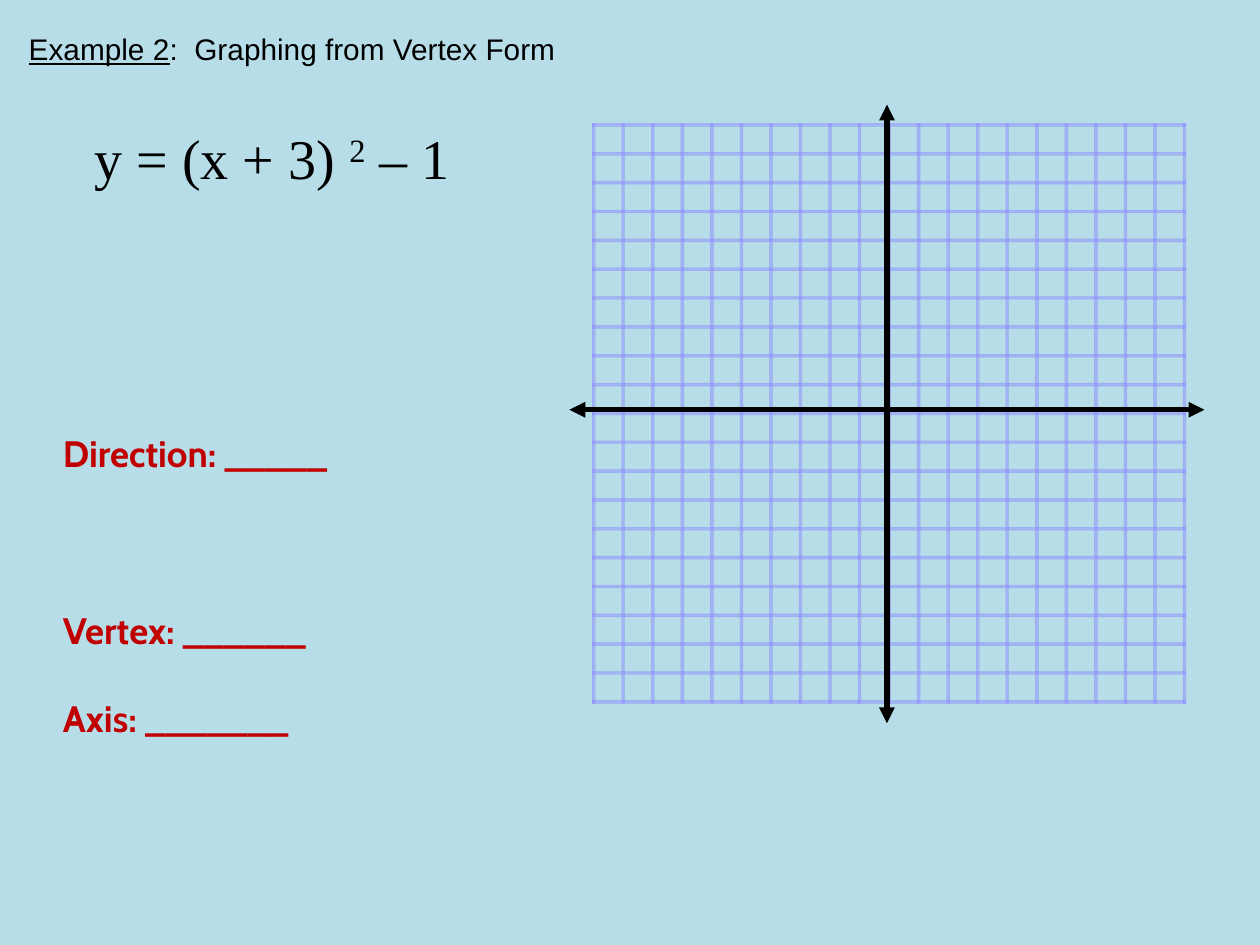
import pptx
import pptx.util
import pptx.dml.color
import pptx.enum.shapes
import pptx.enum.text
import pptx.oxml.ns
import lxml.etree

Cm = pptx.util.Cm
Pt = pptx.util.Pt
qn = pptx.oxml.ns.qn
COLORS = {
    "background": "B7DEE8",
    "grid": "8C8CFF",
    "ink": "000000",
    "prompt": "C00000",
}


def rgb(name):
    return pptx.dml.color.RGBColor.from_string(COLORS[name])


def add_text(slide, paragraphs, left, top, width, height, font, size,
             color="ink", bold=False, inset=0.1, wrap=True):
    shape = slide.shapes.add_textbox(Cm(left), Cm(top), Cm(width), Cm(height))
    frame = shape.text_frame
    frame.word_wrap = wrap
    frame.auto_size = pptx.enum.text.MSO_AUTO_SIZE.SHAPE_TO_FIT_TEXT
    frame.margin_left = frame.margin_right = Cm(inset)
    frame.margin_top = frame.margin_bottom = Cm(inset)
    for index, (space_before, runs) in enumerate(paragraphs):
        paragraph = frame.add_paragraph() if index else frame.paragraphs[0]
        paragraph.space_before = Pt(space_before)
        for text, style in runs:
            run = paragraph.add_run()
            run.text = text
            run.font.name = font
            run.font.size = Pt(size)
            run.font.bold = bold
            run.font.color.rgb = rgb(color)
            run.font.underline = style == "underline"
            if style == "superscript":
                run.font._element.set("baseline", "30000")


presentation = pptx.Presentation()
presentation.slide_width = Cm(25.4)
presentation.slide_height = Cm(19.05)
slide = presentation.slides.add_slide(presentation.slide_layouts[6])
slide.background.fill.solid()
slide.background.fill.fore_color.rgb = rgb("background")

add_text(slide, [(0, [("Example 2", "underline"),
                      (":  Graphing from Vertex Form", None)])],
         0.48, 0.53, 15.11, 0.94, "Arial", 17)

cells = 20
thickness = 0.06
grid_left, grid_top = 11.94, 2.49
grid_width, grid_height = 11.91, 11.63
bars = []
for step in range(cells + 1):
    bars.append((grid_left + step * grid_width / cells, grid_top,
                 thickness, grid_height + thickness))
    bars.append((grid_left, grid_top + step * grid_height / cells,
                 grid_width + thickness, thickness))

graph = slide.shapes.add_group_shape()
for bar in bars:
    shape = graph.shapes.add_shape(
        pptx.enum.shapes.MSO_SHAPE.RECTANGLE, *[Cm(value) for value in bar])
    shape.shadow.inherit = False
    shape.fill.solid()
    shape.fill.fore_color.rgb = rgb("grid")
    shape.line.color.rgb = rgb("grid")
    shape.line.width = Pt(0.25)
    for color in shape._element.spPr.iter(qn("a:srgbClr")):
        lxml.etree.SubElement(color, qn("a:alpha")).set("val", "51000")

axes = [(17.88, 14.58, 17.88, 2.11), (11.48, 8.26, 24.28, 8.26)]
for ends in axes:
    axis = graph.shapes.add_connector(
        pptx.enum.shapes.MSO_CONNECTOR.STRAIGHT, *[Cm(value) for value in ends])
    axis.line.color.rgb = rgb("ink")
    axis.line.width = Pt(3)
    line = axis.line._get_or_add_ln()
    for arrowhead in ("a:headEnd", "a:tailEnd"):
        lxml.etree.SubElement(line, qn(arrowhead)).set("type", "triangle")
    lxml.etree.SubElement(axis._element.spPr, qn("a:effectLst"))

add_text(slide, [(0, [("Direction: _____", None)]),
                 (75.8, [("Vertex: ______", None)]),
                 (25.3, [("Axis: _______", None)])],
         1.17, 8.59, 7.01, 6.4, "Cabin", 21, color="prompt", bold=True)

add_text(slide, [(0, [("y = (x + 3) ", None), ("2", "superscript"),
                      (" – 1", None)])],
         1.78, 2.36, 7.77, 1.52, "Times New Roman", 32, inset=0.13, wrap=False)

presentation.save("out.pptx")
